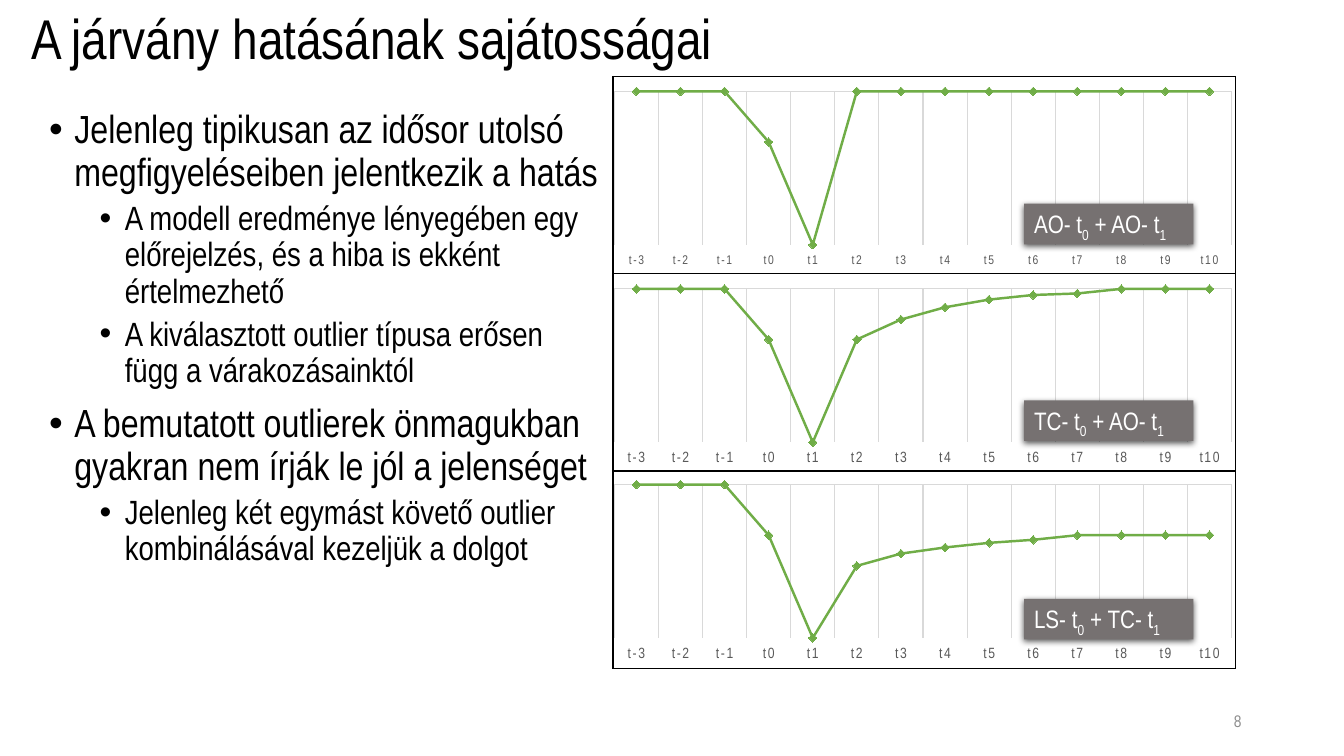
from dataclasses import dataclass

from lxml import etree
from pptx import Presentation
from pptx import util as u
from pptx.chart.data import CategoryChartData
from pptx.dml.color import RGBColor
from pptx.enum import chart as ch, shapes, text
from pptx.oxml import parse_xml
from pptx.oxml.ns import nsdecls, qn

Pt = u.Pt
FONT = "Arial Narrow"
BLACK, WHITE, GREEN = "000000", "FFFFFF", "70AD47"
GRID, GREY, LABEL, PAGE = "D9D9D9", "595959", "767171", "8C8C8C"
TIMES = [f"t{n}" for n in range(-3, 11)]


@dataclass
class Panel:
    top: float
    plot: float
    size: float
    tag: float
    kinds: tuple[str, str]
    vals: list[int]


@dataclass
class Point:
    words: str
    level: int = 0


PANELS = [
    Panel(54, 0.08, 9, 145.5, ("AO", "AO"),
          [0, 0, 0, -33, -100, 0, 0, 0, 0, 0, 0, 0, 0, 0]),
    Panel(195.1, 0.08, 10.6, 286, ("TC", "AO"),
          [0, 0, 0, -33, -100, -33, -20, -12, -7, -4, -3, 0, 0, 0]),
    Panel(339.1, 0.05, 10.6, 427.7, ("LS", "TC"),
          [0, 0, 0, -33, -100, -53, -45, -41, -38, -36, -33, -33, -33, -33]),
]
POINTS = [
    Point("Jelenleg tipikusan az idősor utolsó megfigyeléseiben jelentkezik a hatás"),
    Point("A modell eredménye lényegében egy előrejelzés, és a hiba is ekként értelmezhető", 1),
    Point("A kiválasztott outlier típusa erősen függ a várakozásainktól", 1),
    Point("A bemutatott outlierek önmagukban gyakran nem írják le jól a jelenséget"),
    Point("Jelenleg két egymást követő outlier kombinálásával kezeljük a dolgot", 1),
]


def rgb(color: str) -> RGBColor:
    return RGBColor.from_string(color)


def style(font, size: float, color: str) -> None:
    font.name, font.size = FONT, Pt(size)
    font.color.rgb = rgb(color)


def add_box(slide, x: float, y: float, w: float, h: float, mid: bool = False):
    frame = slide.shapes.add_textbox(Pt(x), Pt(y), Pt(w), Pt(h)).text_frame
    frame.word_wrap = True
    if mid:
        frame.vertical_anchor = text.MSO_ANCHOR.MIDDLE
    return frame


def add_list(slide) -> None:
    frame = add_box(slide, 28.1, 74.9, 407.5, 385.2)
    for i, point in enumerate(POINTS):
        para = frame.paragraphs[0] if i == 0 else frame.add_paragraph()
        para.text, para.level, para.line_spacing = point.words, point.level, 0.9
        if i:
            para.space_before = Pt(5 if point.level else 10)
        props = para._p.get_or_add_pPr()
        props.set("marL", str(Pt(54 if point.level else 18)))
        props.set("indent", str(Pt(-18)))
        etree.SubElement(props, qn("a:buFont")).set("typeface", "Arial")
        etree.SubElement(props, qn("a:buChar")).set("char", "•")
        style(para.font, 24 if point.level else 28, BLACK)


def add_frame(slide) -> None:
    table = slide.shapes.add_table(3, 1, Pt(437.8), Pt(54.7), Pt(445), Pt(422.6)).table
    table.first_row = table.horz_banding = False
    for cell in table.iter_cells():
        cell.fill.background()
        props = cell._tc.get_or_add_tcPr()
        for i, side in enumerate(("lnL", "lnR", "lnT", "lnB")):
            props.insert(i, parse_xml(
                f'<a:{side} {nsdecls("a")} w="{Pt(1)}"><a:solidFill>'
                f'<a:srgbClr val="{BLACK}"/></a:solidFill></a:{side}>'))


def add_graph(slide, panel: Panel) -> None:
    data = CategoryChartData()
    data.categories = TIMES
    data.add_series("Series 1", panel.vals)
    chart = slide.shapes.add_chart(ch.XL_CHART_TYPE.LINE_MARKERS, Pt(438.5), Pt(panel.top),
                                   Pt(441.6), Pt(140.6), data).chart
    chart.has_legend = chart.has_title = False
    style(chart.font, 10, BLACK)
    # Axes
    axis = chart.category_axis
    axis.tick_label_position = ch.XL_TICK_LABEL_POSITION.LOW
    axis.major_tick_mark = axis.minor_tick_mark = ch.XL_TICK_MARK.NONE
    axis.has_major_gridlines = True
    for line in (axis.format.line, axis.major_gridlines.format.line):
        line.color.rgb, line.width = rgb(GRID), Pt(0.75)
    style(axis.tick_labels.font, panel.size, GREY)
    for props in axis._element.iter(qn("a:defRPr")):
        props.set("spc", "120")
    scale = chart.value_axis
    scale.minimum_scale, scale.maximum_scale = -100, 0
    scale.has_major_gridlines = scale.visible = False
    # Line and markers
    plot = chart.plots[0]
    plot.vary_by_categories = False
    curve = plot.series[0]
    curve.smooth = False
    curve.format.line.color.rgb, curve.format.line.width = rgb(GREEN), Pt(1.75)
    mark = curve.marker
    mark.style, mark.size = ch.XL_MARKER_STYLE.DIAMOND, 6
    mark.format.fill.solid()
    mark.format.fill.fore_color.rgb = mark.format.line.color.rgb = rgb(GREEN)
    # Inner plot area
    area = chart._chartSpace.find(".//" + qn("c:plotArea"))
    for old in area.findall(qn("c:layout")):
        area.remove(old)
    spots = {"layoutTarget": "inner", "xMode": "edge", "yMode": "edge",
             "x": 0, "y": panel.plot, "w": 1, "h": 0.78}
    inner = "".join(f'<c:{key} val="{val}"/>' for key, val in spots.items())
    area.insert(0, parse_xml(f'<c:layout {nsdecls("c")}><c:manualLayout>{inner}'
                             '</c:manualLayout></c:layout>'))


def add_tag(slide, panel: Panel) -> None:
    shape = slide.shapes.add_shape(shapes.MSO_SHAPE.RECTANGLE, Pt(731.5), Pt(panel.tag),
                                   Pt(121), Pt(29))
    shape.fill.solid()
    shape.fill.fore_color.rgb = rgb(LABEL)
    shape.line.fill.background()
    shape.shadow.inherit = False
    glow = shape._element.spPr.find(qn("a:effectLst"))
    glow.append(parse_xml(
        f'<a:outerShdw {nsdecls("a")} blurRad="{Pt(4.5)}" dist="{Pt(1.5)}" dir="5400000" '
        f'rotWithShape="0"><a:srgbClr val="{BLACK}"><a:alpha val="63000"/></a:srgbClr>'
        '</a:outerShdw>'))
    frame = shape.text_frame
    frame.word_wrap = True
    frame.vertical_anchor = text.MSO_ANCHOR.TOP
    para = frame.paragraphs[0]
    para.alignment = text.PP_ALIGN.LEFT
    first, second = panel.kinds
    for words, sub in ((f"{first}- t", "0"), (f" + {second}- t", "1")):
        para.add_run().text = words
        low = para.add_run()
        low.text = sub
        low._r.get_or_add_rPr().set("baseline", "-25000")
    style(para.font, 18, WHITE)


def main() -> None:
    deck = Presentation()
    deck.slide_width, deck.slide_height = Pt(960), Pt(540)
    slide = deck.slides.add_slide(deck.slide_layouts[6])
    # Text
    add_list(slide)
    page = add_box(slide, 678, 500.5, 216, 28.8, True).paragraphs[0]
    page.text, page.alignment = "8", text.PP_ALIGN.RIGHT
    style(page.font, 12, PAGE)
    title = add_box(slide, 15.1, 0, 828, 59.8, True).paragraphs[0]
    title.text, title.line_spacing = "A járvány hatásának sajátosságai", 0.9
    style(title.font, 40, BLACK)
    # Charts in a frame, with their labels on top
    add_frame(slide)
    for panel in PANELS:
        add_graph(slide, panel)
    for panel in PANELS:
        add_tag(slide, panel)
    deck.save("out.pptx")


if __name__ == "__main__":
    main()
